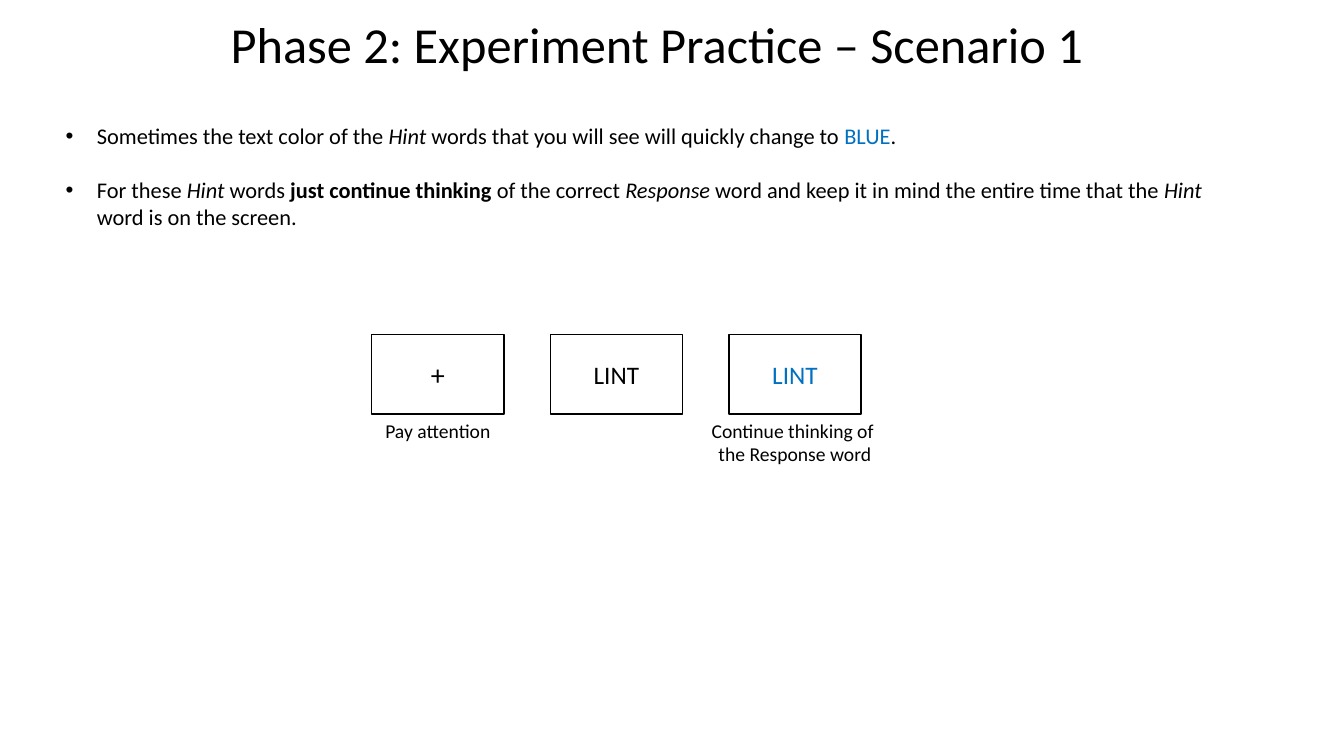
from dataclasses import dataclass

from pptx import Presentation
from pptx.dml.color import RGBColor
from pptx.enum.shapes import MSO_SHAPE as Kind
from pptx.enum.text import MSO_ANCHOR as Anchor, MSO_AUTO_SIZE as Fit, PP_ALIGN as Align
from pptx.util import Cm, Pt

BLACK, BLUE = "000000", "0070C0"
BOX_X, BOX_Y, BOX_W, BOX_H, STEP = 9.37, 8.43, 3.33, 2.0, 4.5
CAP_W = 6.91


@dataclass
class Span:
    text: str
    color: str = BLACK
    bold: bool = False
    italic: bool = False


@dataclass
class Card:
    word: str
    size: int = 18
    color: str = BLACK
    note: str = ""
    note_h: float = 0.86


HINT = Span("Hint", italic=True)
RULES = [
    [Span("Sometimes the text color of the "), HINT,
     Span(" words that you will see will quickly change to "),
     Span("BLUE", BLUE), Span(".")],
    [Span("For these "), HINT, Span(" words "),
     Span("just continue thinking", bold=True), Span(" of the correct "),
     Span("Response", italic=True),
     Span(" word and keep it in mind the entire time that the "), HINT,
     Span(" word is on the screen.")],
]
CARDS = [
    Card("+", 20, note="Pay attention"),
    Card("LINT"),
    Card("LINT", color=BLUE, note="Continue thinking of \nthe Response word", note_h=1.45),
]


def rgb(code: str) -> RGBColor:
    return RGBColor.from_string(code)


def style(run, size: int, color: str = BLACK) -> None:
    font = run.font
    font.name, font.size = "Calibri", Pt(size)
    font.color.rgb = rgb(color)


def place(shape, x: float, y: float, w: float, h: float) -> None:
    shape.left, shape.top, shape.width, shape.height = Cm(x), Cm(y), Cm(w), Cm(h)


def center(frame, text: str, size: int, color: str = BLACK) -> None:
    frame.word_wrap = True
    frame.text = text
    for para in frame.paragraphs:
        para.alignment = Align.CENTER
        for run in para.runs:
            style(run, size, color)


def draw_list(frame, rules: list[list[Span]]) -> None:
    frame.auto_size = Fit.NONE
    for i, spans in enumerate(rules):
        para = frame.paragraphs[0] if i == 0 else frame.add_paragraph()
        para.space_before = Pt(19.5 if i else 0)
        props = para._p.get_or_add_pPr()
        props.set("marL", str(Cm(0.79)))
        props.set("indent", str(-Cm(0.79)))
        for span in spans:
            run = para.add_run()
            run.text = span.text
            style(run, 16, span.color)
            run.font.bold, run.font.italic = span.bold, span.italic


def draw_card(shapes, card: Card, x: float) -> None:
    box = shapes.add_shape(Kind.RECTANGLE, Cm(x), Cm(BOX_Y), Cm(BOX_W), Cm(BOX_H))
    box.shadow.inherit = False
    box.fill.background()
    box.line.color.rgb = rgb(BLACK)
    box.line.width = Pt(1)
    box.text_frame.vertical_anchor = Anchor.MIDDLE
    center(box.text_frame, card.word, card.size, card.color)
    if card.note:
        left = x + (BOX_W - CAP_W) / 2
        note = shapes.add_textbox(Cm(left), Cm(BOX_Y + BOX_H), Cm(CAP_W), Cm(card.note_h))
        center(note.text_frame, card.note, 14)


def main() -> None:
    deck = Presentation()
    deck.slide_width, deck.slide_height = Cm(33.87), Cm(19.05)
    slide = deck.slides.add_slide(deck.slide_layouts[1])

    # Title
    title = slide.shapes.title
    place(title, 3.86, 0.2, 25.4, 1.8)
    title.text_frame.auto_size = Fit.NONE
    center(title.text_frame, "Phase 2: Experiment Practice – Scenario 1", 36)

    # Instructions
    body = slide.placeholders[1]
    place(body, 1.4, 2.95, 30.38, 3)
    draw_list(body.text_frame, RULES)

    # Screen sequence with captions
    for i, card in enumerate(CARDS):
        draw_card(slide.shapes, card, BOX_X + i * STEP)

    deck.save("out.pptx")


if __name__ == "__main__":
    main()
